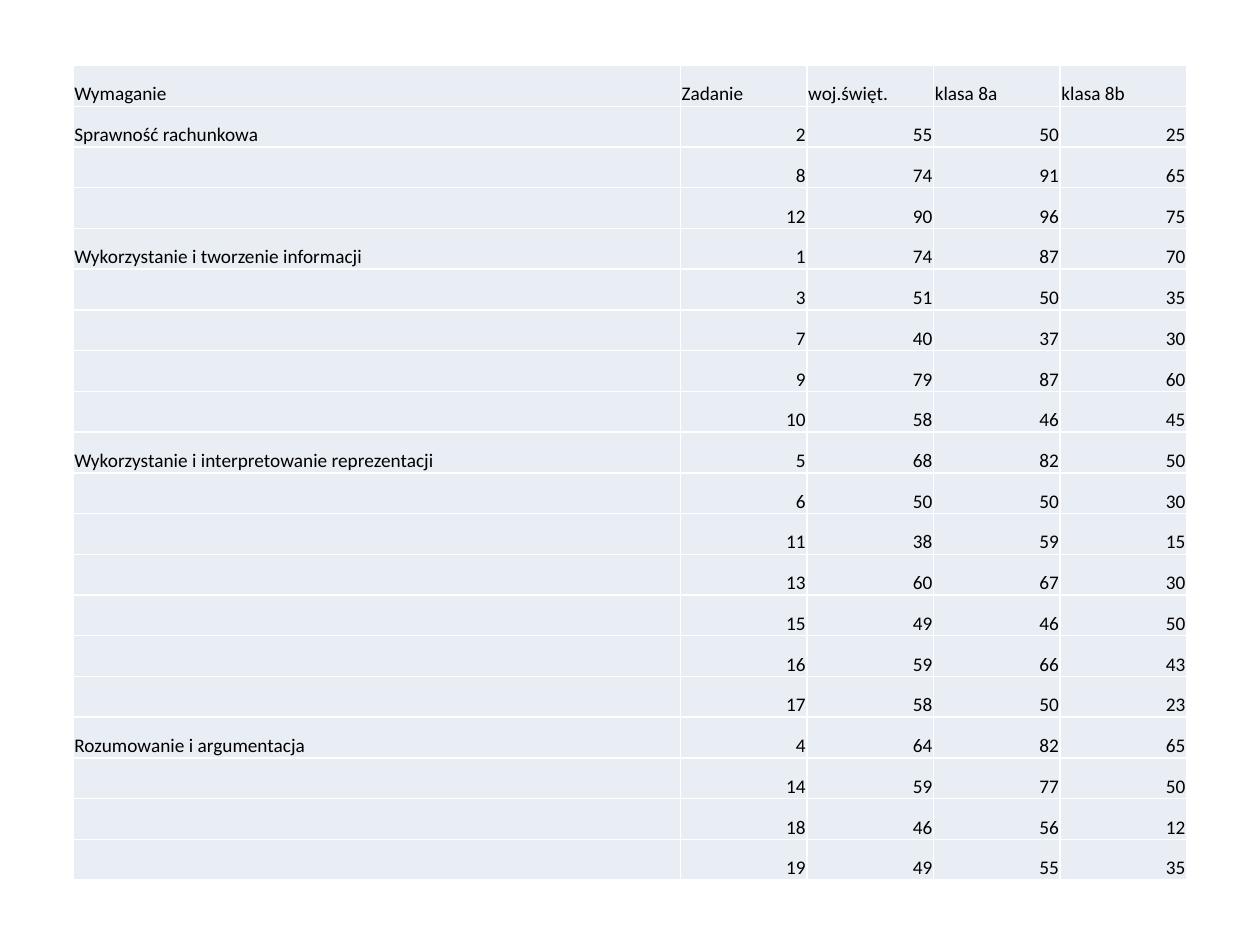
import pptx
import pptx.dml.color
import pptx.enum.text
import pptx.oxml.ns
import pptx.util
from lxml import etree

RGBColor = pptx.dml.color.RGBColor
Inches = pptx.util.Inches
Pt = pptx.util.Pt
PP_ALIGN = pptx.enum.text.PP_ALIGN
qn = pptx.oxml.ns.qn

CELL_FILL = RGBColor(0xE9, 0xED, 0xF4)
BORDER = RGBColor(0xFF, 0xFF, 0xFF)
TEXT = RGBColor(0x00, 0x00, 0x00)

SLIDE_W, SLIDE_H = Inches(10), Inches(7.5)
COLUMN_SHARES = (4.82, 1.005, 1.005, 1.005, 1.005)
HEADERS = ("Wymaganie", "Zadanie", "woj.święt.", "klasa 8a", "klasa 8b")
REQUIREMENTS = {
    "Sprawność rachunkowa": [
        (2, 55, 50, 25), (8, 74, 91, 65), (12, 90, 96, 75),
    ],
    "Wykorzystanie i tworzenie informacji": [
        (1, 74, 87, 70), (3, 51, 50, 35), (7, 40, 37, 30),
        (9, 79, 87, 60), (10, 58, 46, 45),
    ],
    "Wykorzystanie i interpretowanie reprezentacji": [
        (5, 68, 82, 50), (6, 50, 50, 30), (11, 38, 59, 15), (13, 60, 67, 30),
        (15, 49, 46, 50), (16, 59, 66, 43), (17, 58, 50, 23),
    ],
    "Rozumowanie i argumentacja": [
        (4, 64, 82, 65), (14, 59, 77, 50), (18, 46, 56, 12), (19, 49, 55, 35),
    ],
}


def result_rows():
    """Return the header and task rows, naming each requirement once."""
    rows = [HEADERS]
    for requirement, tasks in REQUIREMENTS.items():
        for i, task in enumerate(tasks):
            rows.append(("" if i else requirement, *task))
    return rows


def set_borders(cell):
    """Draw a thin line on all four sides of a cell."""
    tcPr = cell._tc.get_or_add_tcPr()
    for i, side in enumerate(("lnL", "lnR", "lnT", "lnB")):
        ln = etree.Element(qn(f"a:{side}"), w=str(Pt(1)))
        fill = etree.SubElement(ln, qn("a:solidFill"))
        etree.SubElement(fill, qn("a:srgbClr"), val=str(BORDER))
        tcPr.insert(i, ln)


def fill_cell(cell, value):
    """Format a cell and write its value, with numbers to the right."""
    cell.margin_left = cell.margin_right = cell.margin_top = Inches(0.01)
    cell.margin_bottom = 0
    cell.vertical_anchor = pptx.enum.text.MSO_ANCHOR.BOTTOM
    cell.fill.solid()
    cell.fill.fore_color.rgb = CELL_FILL
    set_borders(cell)
    if value == "":
        return
    p = cell.text_frame.paragraphs[0]
    p.alignment = PP_ALIGN.RIGHT if isinstance(value, int) else PP_ALIGN.LEFT
    r = p.add_run()
    r.text = str(value)
    r.font.name = "Calibri"
    r.font.size = Pt(11)
    r.font.color.rgb = TEXT


def add_results_table(s, left, top, width, height):
    """Place the table of results per task in the given box."""
    rows = result_rows()
    table = s.shapes.add_table(
        len(rows), len(HEADERS), left, top, width, height
    ).table
    table.first_row = table.horz_banding = False
    for column, share in zip(table.columns, COLUMN_SHARES):
        column.width = int(width * share / sum(COLUMN_SHARES))
    for i, row in enumerate(rows):
        table.rows[i].height = int(height / len(rows))
        for j, value in enumerate(row):
            fill_cell(table.cell(i, j), value)


def main():
    """Build and save the one-slide presentation."""
    prs = pptx.Presentation()
    prs.slide_width, prs.slide_height = SLIDE_W, SLIDE_H
    s = prs.slides.add_slide(prs.slide_layouts[6])
    left, top = Inches(0.58), Inches(0.52)
    add_results_table(s, left, top, SLIDE_W - 2 * left, Inches(6.47))
    prs.save("out.pptx")


if __name__ == "__main__":
    main()
